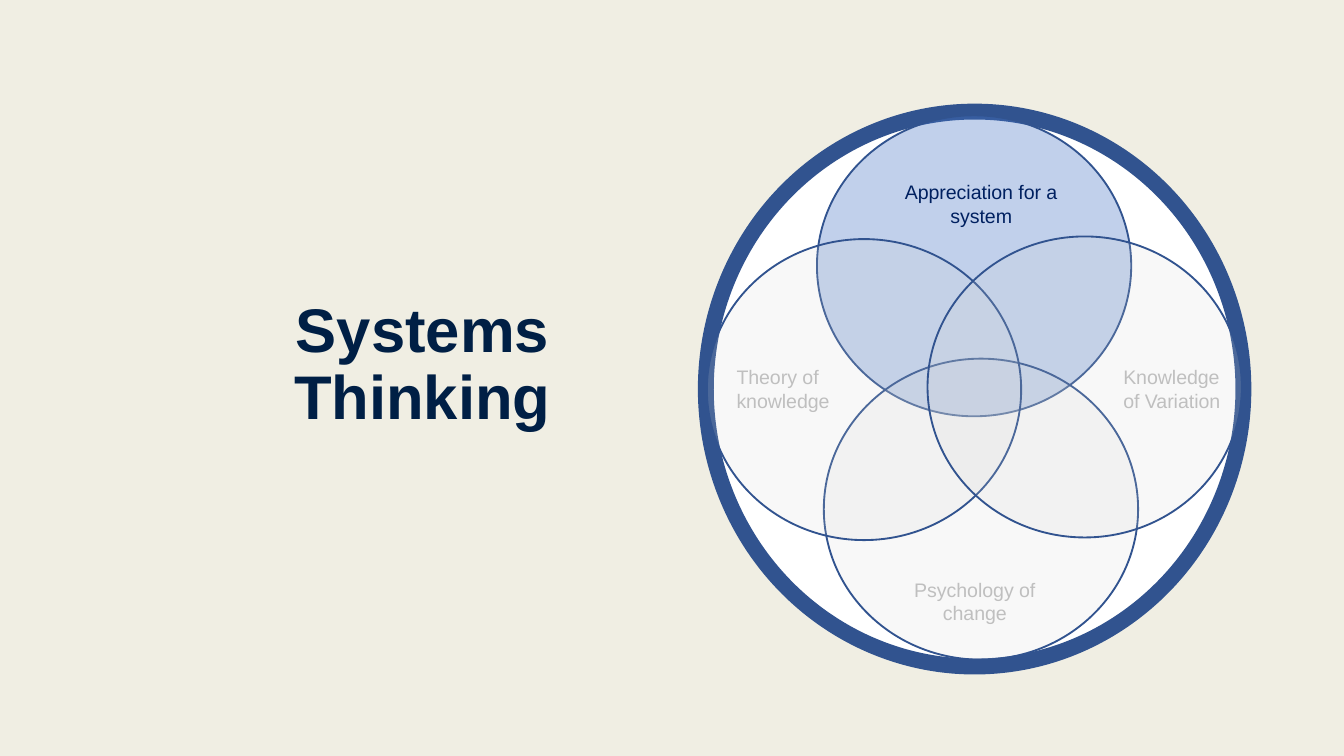
from dataclasses import dataclass

from lxml.etree import SubElement
from pptx import Presentation
from pptx.dml.color import RGBColor
from pptx.enum.shapes import MSO_SHAPE
from pptx.enum.text import MSO_ANCHOR, PP_ALIGN
from pptx.oxml.ns import qn
from pptx.util import Cm, Pt


@dataclass(frozen=True)
class Theme:
    font: str = "Arial"
    paper: str = "F0EEE3"
    white: str = "FFFFFF"
    outline: str = "31538F"
    active: str = "4472C4"
    muted: str = "D8D8D8"
    title: str = "001F45"
    active_text: str = "002060"
    muted_text: str = "BFBFBF"
    title_size: float = 33
    label_size: float = 10.5


class SlideBuilder:
    def __init__(self, s, theme):
        self.s = s
        self.theme = theme

    def background(self, color):
        fill = self.s.background.fill
        fill.solid()
        fill.fore_color.rgb = RGBColor.from_string(color)

    def ellipse(self, x, y, w, h, color, line_width, opacity=100):
        sp = self.s.shapes.add_shape(MSO_SHAPE.OVAL, Cm(x), Cm(y), Cm(w), Cm(h))
        sp.shadow.inherit = False
        sp.fill.solid()
        sp.fill.fore_color.rgb = RGBColor.from_string(color)
        if opacity < 100:
            clr = sp.fill._xPr.find(qn("a:solidFill"))[0]
            SubElement(clr, qn("a:alpha")).set("val", str(opacity * 1000))
        sp.line.color.rgb = RGBColor.from_string(self.theme.outline)
        sp.line.width = Pt(line_width)

    def text(self, x, y, w, h, words, size, color, align=PP_ALIGN.CENTER,
             bold=False, anchor=MSO_ANCHOR.TOP, spacing=None):
        sp = self.s.shapes.add_textbox(Cm(x), Cm(y), Cm(w), Cm(h))
        tf = sp.text_frame
        tf.word_wrap = True
        tf.vertical_anchor = anchor
        p = tf.paragraphs[0]
        p.alignment = align
        if spacing:
            p.line_spacing = spacing
        r = p.add_run()
        r.text = words
        r.font.name = self.theme.font
        r.font.size = Pt(size)
        r.font.bold = bold
        r.font.color.rgb = RGBColor.from_string(color)


def main():
    prs = Presentation()
    prs.slide_width, prs.slide_height = Cm(25.4), Cm(14.29)
    theme = Theme()
    slide = SlideBuilder(prs.slides.add_slide(prs.slide_layouts[6]), theme)

    # Background and title
    slide.background(theme.paper)
    slide.text(3.58, 0.81, 8.81, 12.22, "Systems Thinking", theme.title_size,
               theme.title, bold=True, anchor=MSO_ANCHOR.MIDDLE, spacing=0.9)

    # Enclosing ring
    slide.ellipse(13.34, 2.11, 10.16, 10.49, theme.white, 8.5)

    # Four overlapping circles: left, top, fill, opacity
    circles = [
        (15.44, 2.18, theme.active, 33),
        (15.57, 6.78, theme.muted, 16),
        (13.36, 4.52, theme.muted, 16),
        (17.53, 4.47, theme.muted, 16),
    ]
    for x, y, color, opacity in circles:
        slide.ellipse(x, y, 5.94, 5.69, color, 1, opacity)

    # Circle labels: left, top, width, words, colour, alignment
    labels = [
        (16.41, 3.28, 4.27, "Appreciation for a system", theme.active_text, PP_ALIGN.CENTER),
        (16.61, 10.8, 3.63, "Psychology of change", theme.muted_text, PP_ALIGN.CENTER),
        (13.67, 6.78, 2.34, "Theory of knowledge", theme.muted_text, PP_ALIGN.LEFT),
        (20.98, 6.78, 2.49, "Knowledge of Variation", theme.muted_text, PP_ALIGN.LEFT),
    ]
    for x, y, w, words, color, align in labels:
        slide.text(x, y, w, 1.14, words, theme.label_size, color, align)

    prs.save("out.pptx")


if __name__ == "__main__":
    main()
